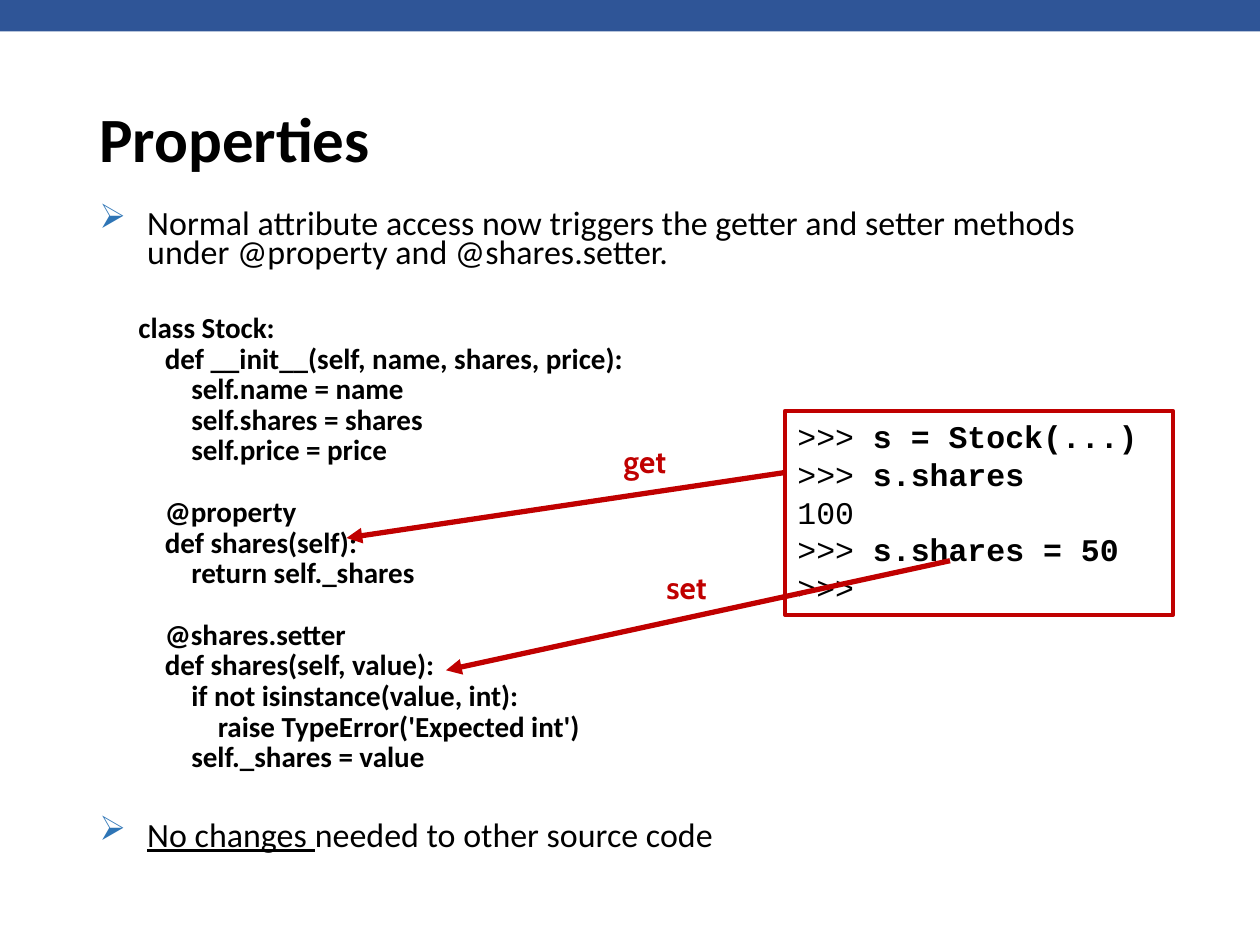
from pptx import Presentation
from pptx.dml.color import RGBColor
from pptx.enum.shapes import MSO_CONNECTOR, MSO_SHAPE
from pptx.enum.text import MSO_ANCHOR
from pptx.oxml.ns import qn
from pptx.util import Inches, Pt
from lxml import etree

RECT, LINE = MSO_SHAPE.RECTANGLE, MSO_CONNECTOR.STRAIGHT
TOP, MIDDLE = MSO_ANCHOR.TOP, MSO_ANCHOR.MIDDLE
BLACK, RED, BLUE, NAVY = "000000", "C00000", "2E75B6", "2F5597"
SANS, MONO, LABEL = "Calibri", "Courier New", "Cabin"
WIDE, HIGH = 10, 7.5

# Content
TITLE = "Properties"
INTRO = ("Normal attribute access now triggers the getter and setter methods "
         "under @property and @shares.setter.")
# Code blocks: (indent level, line)
CODE = [
    [(0, "class Stock:"),
     (1, "def __init__(self, name, shares, price):"),
     (2, "self.name = name"),
     (2, "self.shares = shares"),
     (2, "self.price = price")],
    [(1, "@property"),
     (1, "def shares(self):"),
     (2, "return self._shares")],
    [(1, "@shares.setter"),
     (1, "def shares(self, value):"),
     (2, "if not isinstance(value, int):"),
     (3, "raise TypeError('Expected int')"),
     (2, "self._shares = value")],
]
CLOSE = ("No changes ", "needed to other source code")
# Session: (prompt or output, typed text)
SHELL = [(">>> ", "s = Stock(...)"), (">>> ", "s.shares"), ("100", ""),
         (">>> ", "s.shares = 50"), (">>>", "")]
ARROWS = [((6.23, 3.75), (2.75, 4.27)), ((7.54, 4.45), (3.54, 5.32))]
LABELS = [("get", 4.85, 3.46), ("set", 5.19, 4.46)]

# Spacing before lines, in points
LEAD, STEP = 7.5, 3.55
FIRST, BLOCK, LAST = 28, 21.25, 29.7
MARGIN, TAB, HANG = 0.31, 0.21, 0.38


def color(code):
    return RGBColor.from_string(code)


def style(para, size, face, code=BLACK, bold=None):
    font = para.font
    font.size, font.name, font.bold = Pt(size), face, bold
    font.color.rgb = color(code)


def add_box(x, y, w, h, anchor=TOP):
    box = slide.shapes.add_textbox(Inches(x), Inches(y), Inches(w), Inches(h))
    box.text_frame.word_wrap = True
    box.text_frame.vertical_anchor = anchor
    return box.text_frame


def add_rect(x, y, w, h):
    rect = slide.shapes.add_shape(RECT, Inches(x), Inches(y),
                                  Inches(w), Inches(h))
    rect.shadow.inherit = False
    return rect


def next_para(frame):
    first = frame.paragraphs[0]
    return frame.add_paragraph() if first.runs else first


def add_para(frame, parts, before, size, left, hang=0, bold=None):
    para = next_para(frame)
    for part in parts:
        para.add_run().text = part
    para.line_spacing, para.space_before = 0.7, Pt(before)
    style(para, size, SANS, bold=bold)
    props = para._p.get_or_add_pPr()
    props.set("marL", str(Inches(left)))
    props.set("indent", str(-Inches(hang)))
    return para


def add_point(frame, parts, before):
    para = add_para(frame, parts, before, 19.4, HANG, HANG)
    props = para._p.get_or_add_pPr()
    tint = etree.Element(qn("a:buClr"))
    etree.SubElement(tint, qn("a:srgbClr"), val=BLUE)
    mark = etree.Element(qn("a:buChar"), char="➢")
    # Bullet marks come before the default run properties
    for item in (tint, mark):
        props.find(qn("a:defRPr")).addprevious(item)
    return para


def add_arrow(start, end):
    ends = [Inches(v) for v in start + end]
    arrow = slide.shapes.add_connector(LINE, *ends)
    arrow.line.color.rgb, arrow.line.width = color(RED), Pt(3)
    etree.SubElement(arrow.line._get_or_add_ln(), qn("a:tailEnd"),
                     type="triangle")
    etree.SubElement(arrow._element.spPr, qn("a:effectLst"))


deck = Presentation()
deck.slide_width, deck.slide_height = Inches(WIDE), Inches(HIGH)
slide = deck.slides.add_slide(deck.slide_layouts[6])

# Top band
band = add_rect(0, 0, WIDE, HIGH / 30)
band.fill.solid()
band.fill.fore_color.rgb = color(NAVY)
band.line.fill.background()

# Title
head = add_box(0.69, 0.4, 8.62, 1.45, MIDDLE).paragraphs[0]
head.text, head.line_spacing = TITLE, 0.9
style(head, 36, SANS, bold=True)

# Body: point, code, point
body = add_box(0.69, 1.64, 8.62, 5.5)
add_point(body, [INTRO], LEAD)
for b, block in enumerate(CODE):
    for n, (level, text) in enumerate(block):
        gap = STEP if n else BLOCK if b else FIRST
        add_para(body, [text], gap, 16.6, MARGIN + level * TAB, bold=True)
add_point(body, CLOSE, LAST).runs[0].font.underline = True

# Shell session
shell = add_rect(6.23, 3.26, 3.08, 1.62)
shell.fill.background()
shell.line.color.rgb, shell.line.width = color(RED), Pt(2.25)
frame = shell.text_frame
frame.word_wrap, frame.vertical_anchor = True, TOP
for prompt, typed in SHELL:
    para = next_para(frame)
    para.alignment = 1
    para.add_run().text = prompt
    if typed:
        run = para.add_run()
        run.text, run.font.bold = typed, True
    style(para, 18, MONO)

# Arrows and their labels
for start, end in ARROWS:
    add_arrow(start, end)
for text, x, y in LABELS:
    label = add_box(x, y, 1.04, 0.4).paragraphs[0]
    label.text = text
    style(label, 18, LABEL, RED, True)

deck.save("out.pptx")
